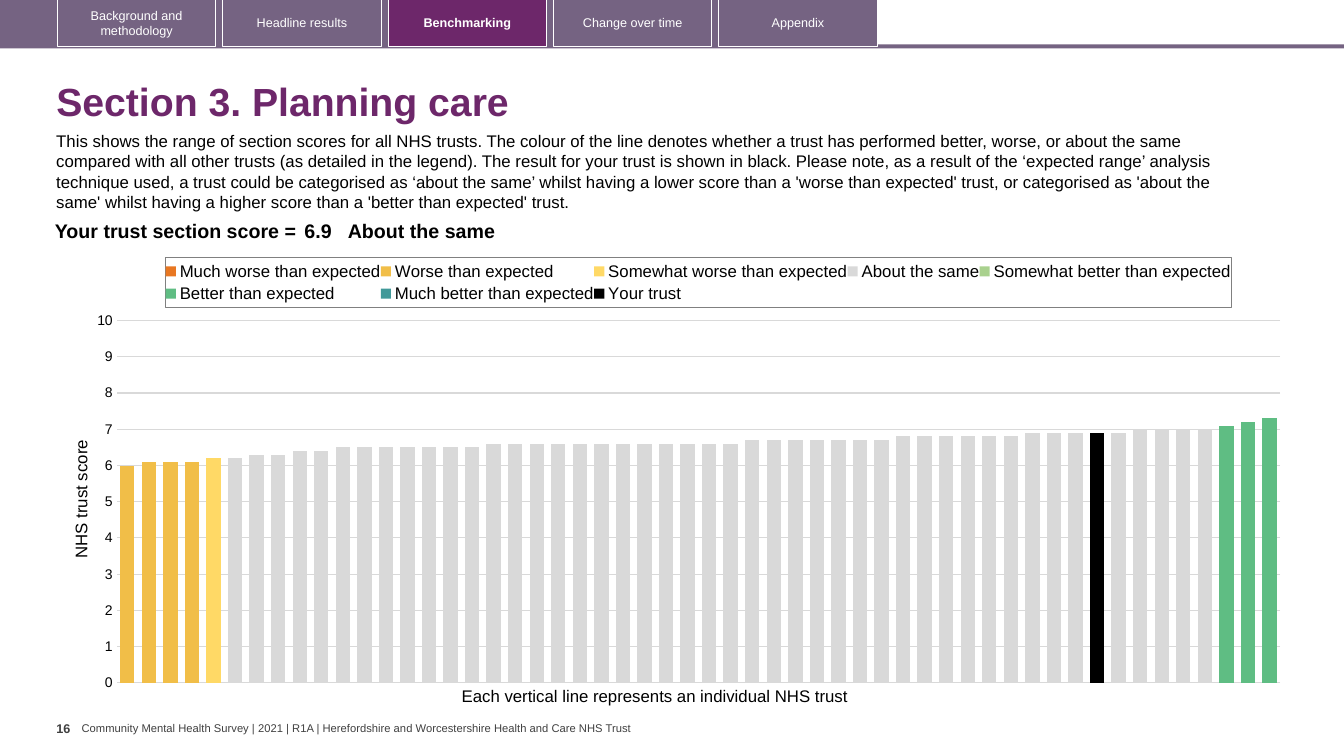
import copy

import pptx
import pptx.chart.data
import pptx.dml.color
import pptx.enum.chart
import pptx.enum.shapes
import pptx.enum.text
import pptx.oxml
import pptx.oxml.ns
import pptx.util

Inches, Pt = pptx.util.Inches, pptx.util.Pt
ALIGN = pptx.enum.text.PP_ALIGN
ANCHOR = pptx.enum.text.MSO_ANCHOR
qn = pptx.oxml.ns.qn

COLORS = {
    "bar": "756382", "plum": "6D276A", "white": "FFFFFF", "black": "000000",
    "gray": "404040", "grid": "D9D9D9", "frame": "808080",
}
TABS = ["Background and methodology", "Headline results", "Benchmarking",
        "Change over time", "Appendix"]
INTRO = (
    "This shows the range of section scores for all NHS trusts. The colour of the line "
    "denotes whether a trust has performed better, worse, or about the same compared with "
    "all other trusts (as detailed in the legend). The result for your trust is shown in "
    "black. Please note, as a result of the ‘expected range’ analysis technique used, a "
    "trust could be categorised as ‘about the same’ whilst having a lower score than a "
    "'worse than expected' trust, or categorised as 'about the same' whilst having a higher "
    "score than a 'better than expected' trust."
)
FOOTER = ("Community Mental Health Survey | 2021 | R1A | "
          "Herefordshire and Worcestershire Health and Care NHS Trust")
TRUSTS = 54
SAME = ([6.2] + [6.3] * 2 + [6.4] * 2 + [6.5] * 7 + [6.6] * 12
        + [6.7] * 7 + [6.8] * 6 + [6.9] * 5 + [7] * 4)
# name, colour, index of first trust, scores
SERIES = [
    ("Much worse than expected", "E87722", 0, []),
    ("Worse than expected", "F1BE48", 0, [6, 6.1, 6.1, 6.1]),
    ("Somewhat worse than expected", "FFD966", 4, [6.2]),
    ("About the same", "D9D9D9", 5, SAME),
    ("Somewhat better than expected", "A9D18E", 0, []),
    ("Better than expected", "5FBD83", 51, [7.1, 7.2, 7.3]),
    ("Much better than expected", "419999", 0, []),
    ("Your trust", "000000", 45, [6.9]),
]


def rgb(code):
    return pptx.dml.color.RGBColor.from_string(code)


def style(font, size, color="black", bold=False, name="Arial"):
    font.name, font.size, font.bold = name, Pt(size), bold
    font.color.rgb = rgb(COLORS[color])


def add_text(slide, box, text, size, color="black", bold=False,
             inset=(0.1, 0.05), wrap=True, anchor=ANCHOR.TOP, space=1.0):
    frame = slide.shapes.add_textbox(*map(Inches, box)).text_frame
    frame.word_wrap, frame.vertical_anchor = wrap, anchor
    frame.margin_left = frame.margin_right = Inches(inset[0])
    frame.margin_top = frame.margin_bottom = Inches(inset[1])
    para = frame.paragraphs[0]
    para.text, para.line_spacing = text, space
    style(para.font, size, color, bold)


def add_rect(slide, box, fill=None, line=None):
    kind = pptx.enum.shapes.MSO_SHAPE.RECTANGLE
    rect = slide.shapes.add_shape(kind, *map(Inches, box))
    rect.shadow.inherit = False
    if fill:
        rect.fill.solid()
        rect.fill.fore_color.rgb = rgb(COLORS[fill])
    else:
        rect.fill.background()
    if line:
        rect.line.color.rgb = rgb(COLORS[line])
        rect.line.width = Pt(0.75)
    else:
        rect.line.fill.background()
    return rect


def add_tabs(slide, active):
    add_rect(slide, (-0.03, 0.44, 13.36, 0.04), "bar")
    add_rect(slide, (-0.03, 0, 8.73, 0.47), "bar")
    for i, label in enumerate(TABS):
        on = label == active
        tab = add_rect(slide, (0.57 + 1.64 * i, -0.01, 1.57, 0.47),
                       "plum" if on else None, "white")
        frame = tab.text_frame
        frame.word_wrap, frame.vertical_anchor = True, ANCHOR.MIDDLE
        para = frame.paragraphs[0]
        para.text, para.alignment = label, ALIGN.CENTER
        style(para.font, 9, "white", on)


def add_score(slide):
    table = slide.shapes.add_table(
        1, 3, *map(Inches, (0.35, 2.15, 11.69, 0.31))).table
    table.first_row = table.horz_banding = False
    cells = [("Your trust section score =", 2.63, 0.04, ALIGN.RIGHT),
             ("6.9", 0.47, 0.04, ALIGN.LEFT),
             ("About the same", 8.59, 0, ALIGN.LEFT)]
    for i, (text, width, inset, align) in enumerate(cells):
        table.columns[i].width = Inches(width)
        cell = table.cell(0, i)
        cell.fill.background()
        cell.margin_left = cell.margin_right = Inches(inset)
        cell.margin_top = cell.margin_bottom = Inches(0.04)
        para = cell.text_frame.paragraphs[0]
        para.text, para.alignment = text, align
        style(para.font, 14, bold=True)


def place(node, index, inner=False, **sizes):
    """Give a chart part a manual layout in fractions of the chart."""
    for old in node.findall(qn("c:layout")):
        node.remove(old)
    target = '<c:layoutTarget val="inner"/>' if inner else ""
    modes = "".join(f'<c:{k}Mode val="edge"/>' for k in "xy")
    parts = "".join(f'<c:{k} val="{v}"/>' for k, v in sizes.items())
    node.insert(index, pptx.oxml.parse_xml(
        f'<c:layout {pptx.oxml.ns.nsdecls("c")}><c:manualLayout>'
        f"{target}{modes}{parts}</c:manualLayout></c:layout>"))


def split_last(plot):
    """Move the last series to a second pair of axes."""
    bars = plot.find(qn("c:barChart"))
    extra = copy.deepcopy(bars)
    bars.remove(bars.findall(qn("c:ser"))[-1])
    for ser in extra.findall(qn("c:ser"))[:-1]:
        extra.remove(ser)
    bars.addnext(extra)
    first = [node.get("val") for node in bars.findall(qn("c:axId"))]
    ids = dict(zip(first, ("5001", "5002")))
    for node in extra.findall(qn("c:axId")):
        node.set("val", ids[node.get("val")])
    value = plot.find(qn("c:valAx"))
    cats = copy.deepcopy(plot.find(qn("c:catAx")))
    right = copy.deepcopy(value)
    for axis in (cats, right):
        for tag in ("c:axId", "c:crossAx"):
            node = axis.find(qn(tag))
            node.set("val", ids[node.get("val")])
    for tag in ("c:majorGridlines", "c:title"):
        right.remove(right.find(qn(tag)))
    for tag, val in (("axPos", "r"), ("tickLblPos", "none"), ("crosses", "max")):
        right.find(qn("c:" + tag)).set("val", val)
    value.addnext(right)
    right.addnext(cats)


def add_scores(slide):
    enums = pptx.enum.chart
    data = pptx.chart.data.CategoryChartData(number_format="0.0")
    data.categories = [str(n + 1) for n in range(TRUSTS)]
    for name, _, start, vals in SERIES:
        rest = TRUSTS - start - len(vals)
        data.add_series(name, [None] * start + vals + [None] * rest)
    chart = slide.shapes.add_chart(
        enums.XL_CHART_TYPE.COLUMN_CLUSTERED,
        *map(Inches, (0.67, 2.47, 12.15, 4.44)), data).chart
    style(chart.font, 10, name="Calibri")
    chart.has_title = False
    bars = chart.plots[0]
    bars.gap_width, bars.overlap, bars.vary_by_categories = 50, 100, False
    for ser, (_, color, _, _) in zip(bars.series, SERIES):
        ser.format.fill.solid()
        ser.format.fill.fore_color.rgb = rgb(color)
        ser.invert_if_negative = False
    chart.category_axis.visible = False

    axis = chart.value_axis
    axis.minimum_scale, axis.maximum_scale, axis.major_unit = 0, 10, 1
    axis.major_tick_mark = enums.XL_TICK_MARK.NONE
    axis.tick_label_position = enums.XL_TICK_LABEL_POSITION.NEXT_TO_AXIS
    axis.tick_labels.number_format = "0"
    axis.tick_labels.number_format_is_linked = False
    style(axis.tick_labels.font, 10)
    axis.format.line.fill.background()
    grid = axis.major_gridlines.format.line
    grid.color.rgb, grid.width = rgb(COLORS["grid"]), Pt(0.75)
    para = axis.axis_title.text_frame.paragraphs[0]
    para.text = "NHS trust score"
    style(para.font, 12)

    chart.has_legend = True
    legend = chart.legend
    legend.position = enums.XL_LEGEND_POSITION.TOP
    legend.include_in_layout = False
    style(legend.font, 12)
    key = legend._element
    key.find(qn("c:txPr")).addprevious(pptx.oxml.parse_xml(
        f'<c:spPr {pptx.oxml.ns.nsdecls("c", "a")}><a:ln w="9525"><a:solidFill>'
        f'<a:srgbClr val="{COLORS["frame"]}"/></a:solidFill></a:ln></c:spPr>'))
    plot = chart._chartSpace.chart.plotArea
    place(plot, 0, True, x=0.04, y=0.16, w=0.95, h=0.81)
    place(key, 1, x=0.08, y=0.02, w=0.87, h=0.11)
    place(axis.axis_title._element, 1, x=0, y=0.42)
    split_last(plot)


def main():
    deck = pptx.Presentation()
    deck.slide_width, deck.slide_height = Inches(13.33), Inches(7.5)
    slide = deck.slides.add_slide(deck.slide_layouts[6])
    add_text(slide, (0.81, 7.16, 5.53, 0.13), FOOTER, 8, "gray",
             inset=(0, 0), wrap=False, anchor=ANCHOR.MIDDLE)
    add_tabs(slide, "Benchmarking")
    add_text(slide, (0.46, 0.67, 12.49, 0.72), "Section 3. Planning care", 28,
             "plum", True, anchor=ANCHOR.MIDDLE, space=0.9)
    add_text(slide, (0.56, 7.1, 0.25, 0.4), "16", 9, "gray", True,
             inset=(0, 0.05), wrap=False)
    add_text(slide, (0.46, 1.25, 12.13, 0.91), INTRO, 12)
    add_scores(slide)
    add_text(slide, (4.48, 6.75, 4.11, 0.3),
             "Each vertical line represents an individual NHS trust", 12, wrap=False)
    add_score(slide)
    deck.save("out.pptx")


if __name__ == "__main__":
    main()
